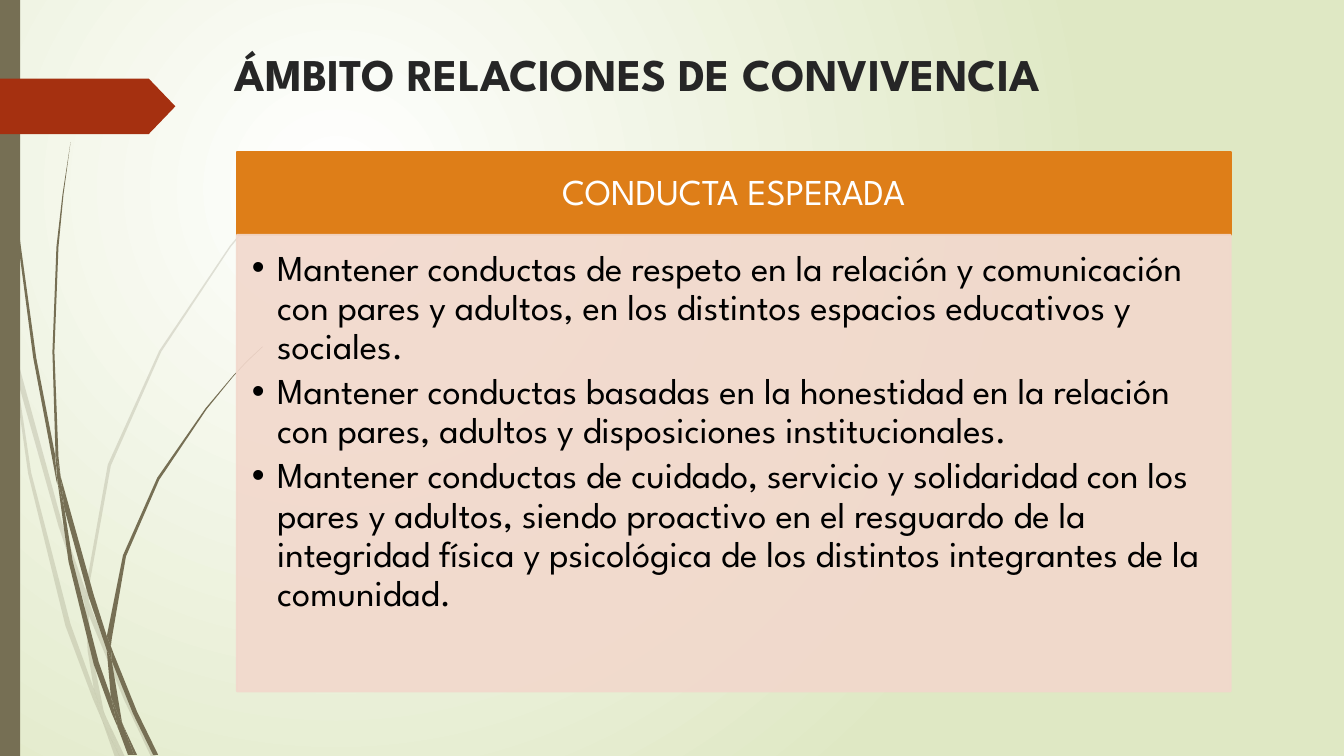
from lxml import etree
from pptx import Presentation
from pptx.dml.color import RGBColor
from pptx.enum.shapes import MSO_SHAPE
from pptx.enum.text import MSO_ANCHOR, PP_ALIGN
from pptx.oxml.ns import qn
from pptx.util import Pt

PX = 9144
FONT = "League Spartan"
RECTANGLE, PENTAGON = MSO_SHAPE.RECTANGLE, MSO_SHAPE.PENTAGON
TOP, MIDDLE = MSO_ANCHOR.TOP, MSO_ANCHOR.MIDDLE
LEFT, CENTER = PP_ALIGN.LEFT, PP_ALIGN.CENTER

WHITE = RGBColor(0xFF, 0xFF, 0xFF)
BLACK = RGBColor(0x00, 0x00, 0x00)
CHARCOAL = RGBColor(0x26, 0x26, 0x26)
PALE_GREEN = RGBColor(0xDF, 0xE8, 0xC4)
OLIVE = RGBColor(0x76, 0x6F, 0x54)
RED = RGBColor(0xA5, 0x30, 0x10)
ORANGE = RGBColor(0xDE, 0x7E, 0x18)
PINK = RGBColor(0xF2, 0xD8, 0xCC)

TITLE = "ÁMBITO RELACIONES DE CONVIVENCIA"
HEADING = "CONDUCTA ESPERADA"
CONDUCTS = [
    "Mantener conductas de respeto en la relación y comunicación con pares y adultos, "
    "en los distintos espacios educativos y sociales.",
    "Mantener conductas basadas en la honestidad en la relación con pares, adultos y "
    "disposiciones institucionales.",
    "Mantener conductas de cuidado, servicio y solidaridad con los pares y adultos, "
    "siendo proactivo en el resguardo de la integridad física y psicológica de los "
    "distintos integrantes de la comunidad.",
]

FAINT_BLADES = [
    [(11, 350), (9, 322), (0, 282), (0, 299), (10, 344)],
    [(58, 522), (84, 599), (85, 586), (62, 520), (14, 345), (17, 376)],
    [(92, 607), (88, 596), (88, 610), (123, 694), (150, 751), (155, 751), (127, 692)],
    [(119, 751), (124, 751), (105, 711)],
    [(93, 683), (70, 619), (31, 469), (17, 376), (11, 350), (28, 470), (65, 621),
     (92, 693), (101, 714), (99, 707)],
    [(84, 599), (87, 646), (93, 683), (96, 692), (105, 711), (103, 706), (91, 646),
     (88, 610), (88, 608)],
    [(88, 584), (110, 462), (160, 349), (229, 245), (268, 198), (290, 175), (312, 154),
     (312, 153), (289, 175), (268, 197), (228, 244), (158, 348), (107, 461), (85, 584),
     (85, 586), (88, 596)],
    [(101, 714), (114, 751), (119, 751)],
    [(88, 608), (88, 610), (88, 596), (85, 586), (84, 599)],
    [(96, 692), (93, 683), (99, 707), (101, 714), (119, 751), (105, 711)],
]
DARK_BLADES = [
    [(7, 110), (17, 233), (33, 355), (56, 477), (57, 481), (55, 457), (55, 453), (36, 355),
     (19, 232), (8, 109), (5, 48), (4, 0), (3, 0), (4, 48)],
    [(88, 592), (106, 645), (106, 633), (106, 631), (93, 590), (60, 472), (64, 505)],
    [(113, 649), (110, 641), (111, 656), (132, 708), (152, 749), (157, 749), (136, 706)],
    [(110, 691), (98, 657), (72, 556), (64, 505), (57, 477), (68, 557), (93, 659),
     (111, 708), (117, 722), (116, 717)],
    [(60, 472), (58, 453), (54, 349), (58, 245), (63, 193), (70, 141), (62, 193),
     (56, 245), (52, 349), (55, 449)],
    [(133, 749), (136, 749), (122, 719)],
    [(57, 477), (64, 505), (60, 472), (55, 449), (55, 453)],
    [(111, 633), (125, 552), (158, 476), (205, 406), (231, 374), (245, 359), (261, 344),
     (260, 344), (245, 358), (231, 373), (204, 405), (156, 474), (122, 551), (106, 631),
     (110, 641)],
    [(117, 722), (127, 749), (131, 749)],
    [(106, 645), (110, 691), (116, 706), (122, 719), (121, 716), (111, 656), (109, 651)],
    [(106, 645), (109, 651), (111, 656), (110, 641), (106, 631), (106, 633)],
    [(116, 706), (110, 691), (116, 717), (117, 722), (130, 749), (133, 749), (122, 719)],
]


def paint(shape, color, opacity=100, outline=0):
    """Give a shape a flat fill, an optional outline and its opacity."""
    shape.shadow.inherit = False
    shape.fill.solid()
    shape.fill.fore_color.rgb = color
    if outline:
        shape.line.color.rgb = color
        shape.line.width = Pt(outline)
    else:
        shape.line.fill.background()
    if opacity < 100:
        for node in shape._element.spPr.iter(qn("a:srgbClr")):
            etree.SubElement(node, qn("a:alpha"), val=str(opacity * 1000))


def add_block(slide, kind, box, color, **style):
    """Add a painted preset shape in a px box."""
    shape = slide.shapes.add_shape(kind, *(value * PX for value in box))
    paint(shape, color, **style)
    return shape


def write(shape, texts, insets, anchor, font, paragraph_format, bullet_indent=0):
    """Write paragraphs into a shape, bulleted when an indent is given."""
    frame = shape.text_frame
    frame.word_wrap = True
    frame.vertical_anchor = anchor
    for side, inset in zip(("left", "top", "right", "bottom"), insets):
        setattr(frame, f"margin_{side}", inset * PX)
    for index, text in enumerate(texts):
        paragraph = frame.add_paragraph() if index else frame.paragraphs[0]
        for name, value in paragraph_format.items():
            setattr(paragraph, name, value)
        run = paragraph.add_run()
        run.text = text
        run.font.color.rgb = font["color"]
        for name in ("name", "size", "bold"):
            setattr(run.font, name, font[name])
        if bullet_indent:
            properties = paragraph._p.get_or_add_pPr()
            properties.set("marL", str(bullet_indent * PX))
            properties.set("indent", str(-bullet_indent * PX))
            etree.SubElement(properties, qn("a:buFont"), typeface="Arial")
            etree.SubElement(properties, qn("a:buChar"), char="•")


def add_background(slide):
    """Fill the background with a radial glow centred on the upper left."""
    fill = slide.background.fill
    fill.gradient()
    for stop, position, color in zip(fill.gradient_stops, (0, 1), (WHITE, PALE_GREEN)):
        stop.position = position
        stop.color.rgb = color
    gradient = next(slide.element.iter(qn("a:gradFill")))
    glow = etree.Element(qn("a:path"), path="circle")
    etree.SubElement(glow, qn("a:fillToRect"), l="50000", t="50000", r="100000", b="100000")
    gradient.replace(gradient.find(qn("a:lin")), glow)


def add_grass(slide, box):
    """Draw the faint and dark blades of grass from the corner of the box."""
    left, top = box[:2]
    for blades, opacity in ((FAINT_BLADES, 20), (DARK_BLADES, 100)):
        for blade in blades:
            outline = [(left + x, top + y) for x, y in blade]
            builder = slide.shapes.build_freeform(*outline[0], scale=PX)
            builder.add_line_segments(outline[1:], close=True)
            paint(builder.convert_to_shape(), OLIVE, opacity)


def add_side_band(slide, box):
    """Draw the olive band and the red arrow tag that crosses it."""
    left, top, width, height = box
    add_block(slide, RECTANGLE, (left, top, width, height), OLIVE)
    tag = add_block(slide, PENTAGON, (left, top + 78, 174, 55), RED)
    tag.adjustments[0] = 0.48


def add_title(slide, box):
    """Write the slide title."""
    title = slide.shapes.add_textbox(*(value * PX for value in box))
    font = {"name": FONT, "size": Pt(32.4), "bold": True, "color": CHARCOAL}
    write(title, [TITLE], (10, 5, 10, 5), TOP, font, {"alignment": LEFT})


def add_conduct_panel(slide, box):
    """Draw the headed panel with the list of expected conducts."""
    left, top, width, height = box
    header_height = 82
    font = {"name": FONT, "size": Pt(26), "bold": False}
    header = add_block(slide, RECTANGLE, (left, top, width, header_height), ORANGE, outline=1.25)
    write(header, [HEADING], (20, 12, 20, 12), MIDDLE, {**font, "color": WHITE},
          {"alignment": CENTER, "line_spacing": 0.9})
    body_box = (left, top + header_height, width, height - header_height)
    body = add_block(slide, RECTANGLE, body_box, PINK, opacity=90, outline=1.25)
    write(body, CONDUCTS, (15, 15, 20, 23), TOP, {**font, "color": BLACK},
          {"alignment": LEFT, "line_spacing": 0.9, "space_after": Pt(3.9)}, bullet_indent=25)


def main():
    """Build and save the slide."""
    presentation = Presentation()
    presentation.slide_width = 4000 * PX // 3
    presentation.slide_height = 750 * PX
    slide = presentation.slides.add_slide(presentation.slide_layouts[6])
    add_background(slide)
    add_grass(slide, (0, 0, 312, 751))
    add_side_band(slide, (0, 0, 20, 750))
    add_title(slide, (223, 41, 975, 59))
    add_conduct_panel(slide, (235, 151, 986, 535))
    presentation.save("out.pptx")


if __name__ == "__main__":
    main()
